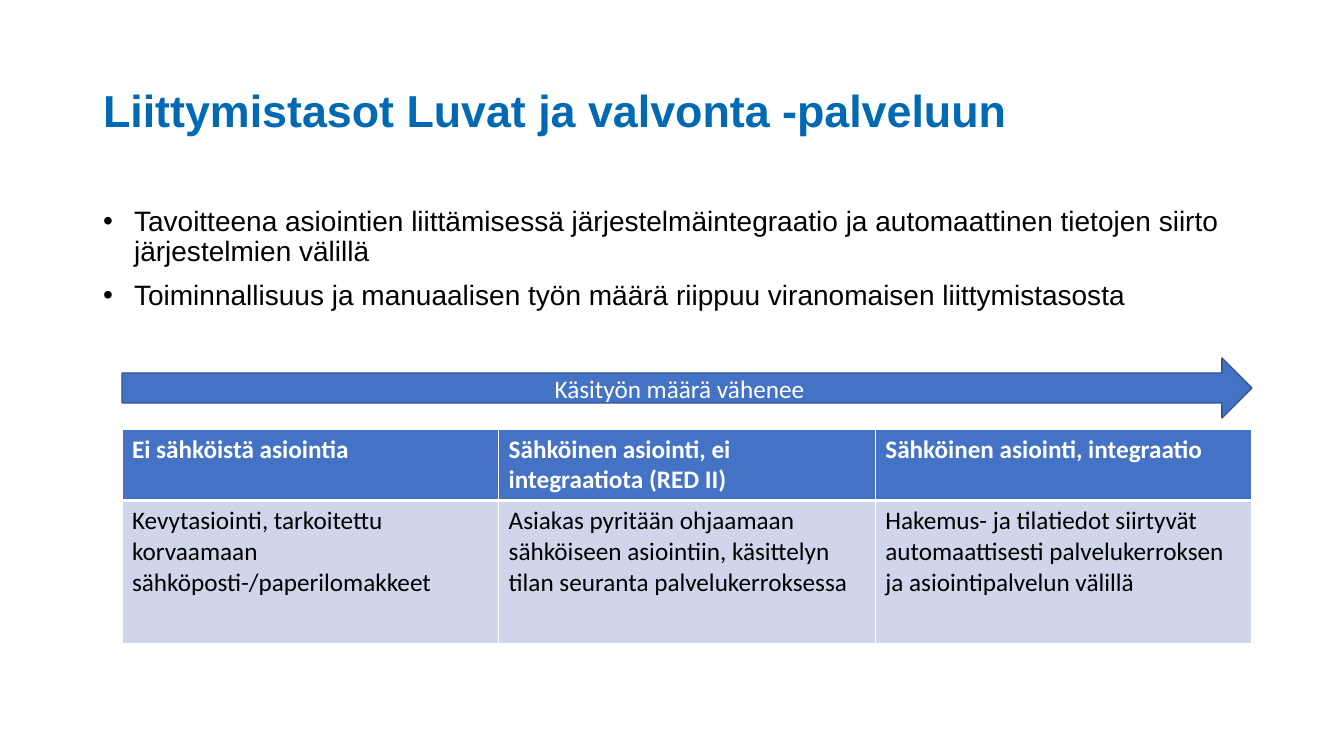
from lxml import etree
from pptx import Presentation
from pptx.dml.color import RGBColor
from pptx.enum.shapes import MSO_SHAPE
from pptx.enum.text import MSO_ANCHOR, MSO_AUTO_SIZE, PP_ALIGN
from pptx.oxml.ns import qn
from pptx.util import Pt

RIGHT_ARROW = MSO_SHAPE.RIGHT_ARROW
TOP, MIDDLE = MSO_ANCHOR.TOP, MSO_ANCHOR.MIDDLE
LEFT, CENTER = PP_ALIGN.LEFT, PP_ALIGN.CENTER
NO_FIT = MSO_AUTO_SIZE.NONE

TITLE_BLUE = RGBColor(0x00, 0x69, 0xB4)
BLUE = RGBColor(0x44, 0x72, 0xC4)
DARK_BLUE = RGBColor(0x32, 0x54, 0x91)
PALE_BLUE = RGBColor(0xCF, 0xD5, 0xEA)
WHITE = RGBColor(0xFF, 0xFF, 0xFF)
BLACK = RGBColor(0x00, 0x00, 0x00)

PX_PER_INCH = 100.8
HEADER_H, DETAIL_H = 70, 143

TITLE = "Liittymistasot Luvat ja valvonta -palveluun"
GOALS = [
    "Tavoitteena asiointien liittämisessä järjestelmäintegraatio ja "
    "automaattinen tietojen siirto järjestelmien välillä",
    "Toiminnallisuus ja manuaalisen työn määrä riippuu viranomaisen liittymistasosta",
]
LEVELS = [
    ("Ei sähköistä asiointia",
     "Kevytasiointi, tarkoitettu korvaamaan sähköposti-/paperilomakkeet"),
    ("Sähköinen asiointi, ei integraatiota (RED II)",
     "Asiakas pyritään ohjaamaan sähköiseen asiointiin, "
     "käsittelyn tilan seuranta palvelukerroksessa"),
    ("Sähköinen asiointi, integraatio",
     "Hakemus- ja tilatiedot siirtyvät automaattisesti "
     "palvelukerroksen ja asiointipalvelun välillä"),
]


def px(n):
    return round(n * 914400 / PX_PER_INCH)


def add_text(p, text, size=18, font="Calibri", color=BLACK, bold=False,
             align=LEFT, spacing=None, before=0):
    p.alignment = align
    p.line_spacing = spacing
    p.space_before = Pt(before)
    r = p.add_run()
    r.text = text
    r.font.size, r.font.name, r.font.bold = Pt(size), font, bold
    r.font.color.rgb = color


def add_bullet(p, indent):
    pPr = p._p.get_or_add_pPr()
    pPr.set("marL", str(px(indent)))
    pPr.set("indent", str(-px(indent)))
    etree.SubElement(pPr, qn("a:buFont")).set("typeface", "Arial")
    etree.SubElement(pPr, qn("a:buChar")).set("char", "•")


def place(sp, box, anchor):
    sp.left, sp.top, sp.width, sp.height = map(px, box)
    tf = sp.text_frame
    tf.auto_size, tf.word_wrap, tf.vertical_anchor = NO_FIT, True, anchor
    return tf


def add_title(s, box):
    tf = place(s.shapes.title, box, MIDDLE)
    add_text(tf.paragraphs[0], TITLE, size=32, font="Arial",
             color=TITLE_BLUE, bold=True, spacing=0.9)


def add_goals(s, box):
    tf = place(s.placeholders[1], box, TOP)
    for i, goal in enumerate(GOALS):
        p = tf.add_paragraph() if i else tf.paragraphs[0]
        add_bullet(p, 31)
        add_text(p, goal, size=20, font="Arial", spacing=0.9,
                 before=10 if i else 0)


def add_arrow(s, box):
    sp = s.shapes.add_shape(RIGHT_ARROW, *map(px, box))
    sp.shadow.inherit = False
    sp.fill.solid()
    sp.fill.fore_color.rgb = BLUE
    sp.line.color.rgb = DARK_BLUE
    sp.line.width = Pt(1)
    tf = sp.text_frame
    tf.word_wrap, tf.vertical_anchor = True, MIDDLE
    add_text(tf.paragraphs[0], "Käsityön määrä vähenee", color=WHITE, align=CENTER)


def set_borders(cell, **widths):
    tcPr = cell._tc.get_or_add_tcPr()
    for side in "LRTB":
        ln = etree.SubElement(tcPr, qn("a:ln" + side))
        ln.set("w", str(Pt(widths.get(side, 1))))
        fill = etree.SubElement(ln, qn("a:solidFill"))
        etree.SubElement(fill, qn("a:srgbClr")).set("val", str(WHITE))


def fill_cell(cell, text, fill, color, bold, **borders):
    set_borders(cell, **borders)
    cell.fill.solid()
    cell.fill.fore_color.rgb = fill
    add_text(cell.text_frame.paragraphs[0], text, color=color, bold=bold)


def add_levels(s, box):
    table = s.shapes.add_table(2, len(LEVELS), *map(px, box)).table
    table.rows[0].height, table.rows[1].height = px(HEADER_H), px(DETAIL_H)
    for col, (name, detail) in enumerate(LEVELS):
        fill_cell(table.cell(0, col), name, BLUE, WHITE, True, B=3)
        fill_cell(table.cell(1, col), detail, PALE_BLUE, BLACK, False, T=3)


def main():
    prs = Presentation()
    prs.slide_width, prs.slide_height = px(1344), px(756)
    s = prs.slides.add_slide(prs.slide_layouts[1])
    add_title(s, (93, 40, 1159, 146))
    add_goals(s, (93, 202, 1159, 146))
    add_levels(s, (122, 429, 1130, HEADER_H + DETAIL_H))
    add_arrow(s, (122, 358, 1130, 60))
    prs.save("out.pptx")


if __name__ == "__main__":
    main()
